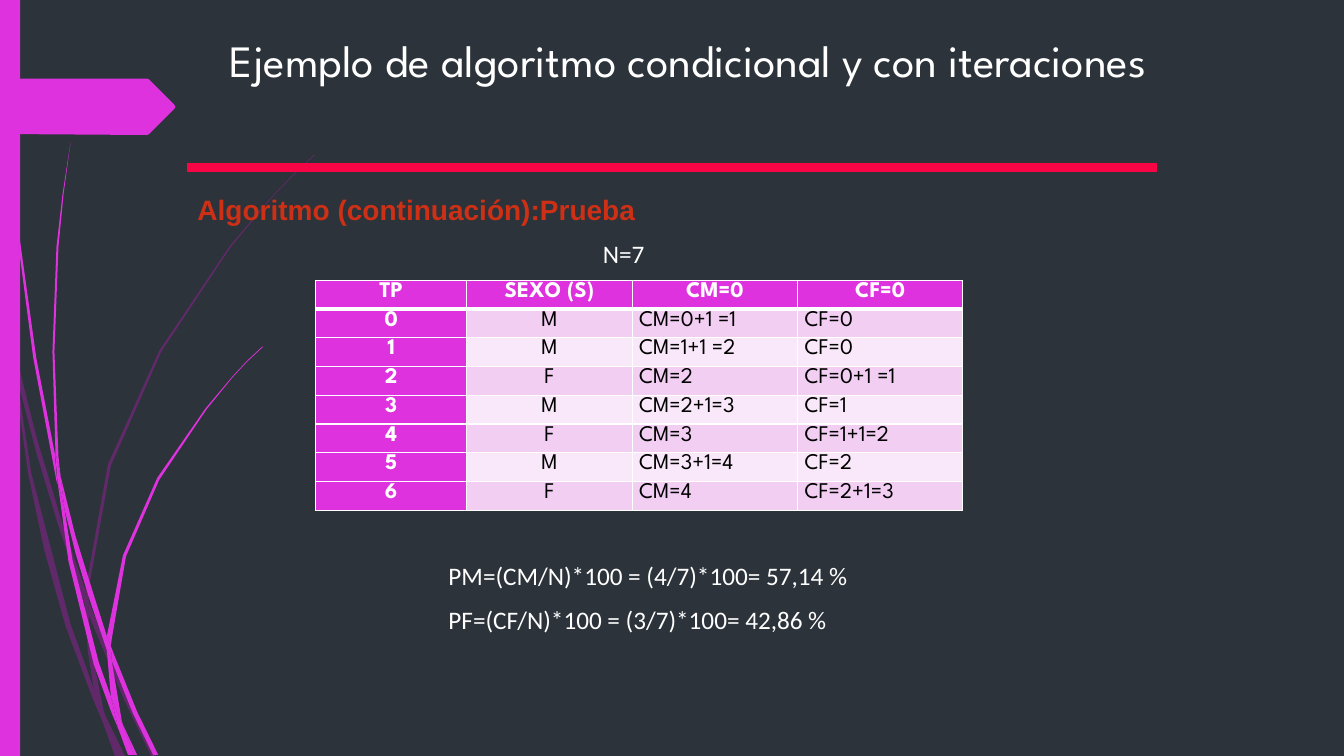
from pptx import Presentation
from pptx.dml.color import RGBColor
from pptx.enum.shapes import MSO_SHAPE
from pptx.enum.text import MSO_ANCHOR, PP_ALIGN
from pptx.oxml.ns import qn
from pptx.util import Inches, Pt
from lxml.etree import SubElement

HUNDREDTH = Inches(0.01)

# Outlines of the ribbon pieces, in hundredths of an inch
DARK_RIBBONS = [
    [(11, 350), (9, 322), (0, 282), (0, 299), (10, 344)],
    [(58, 522), (84, 599), (85, 586), (62, 520), (36, 433), (14, 345), (17, 376), (36, 449)],
    [(92, 607), (88, 596), (88, 610), (123, 694), (150, 750), (155, 750), (127, 692)],
    [(119, 750), (124, 750), (105, 711)],
    [(93, 683), (70, 619), (31, 469), (17, 376), (11, 350), (28, 470), (44, 546), (65, 621),
     (92, 693), (101, 714), (99, 707)],
    [(84, 599), (87, 646), (93, 683), (96, 692), (105, 711), (103, 706), (91, 646), (88, 610),
     (88, 608)],
    [(88, 584), (110, 462), (160, 349), (229, 245), (268, 198), (290, 175), (312, 154),
     (312, 153), (289, 175), (268, 197), (228, 244), (158, 348), (107, 461), (85, 584),
     (85, 586), (88, 596)],
    [(101, 714), (114, 750), (119, 750)],
    [(88, 608), (88, 610), (88, 596), (85, 586), (84, 599)],
    [(96, 692), (93, 683), (99, 707), (101, 714), (119, 750), (105, 711)],
]
BRIGHT_RIBBONS = [
    [(7, 110), (17, 233), (33, 355), (56, 477), (57, 481), (55, 457), (55, 453), (36, 355),
     (19, 232), (8, 109), (5, 48), (4, 0), (3, 0), (4, 48)],
    [(88, 592), (106, 645), (106, 633), (106, 631), (93, 590), (75, 532), (60, 472), (64, 505),
     (75, 549)],
    [(113, 649), (110, 641), (111, 656), (132, 708), (152, 749), (157, 749), (136, 706)],
    [(110, 691), (98, 657), (72, 556), (64, 505), (57, 477), (68, 557), (93, 659), (111, 708),
     (117, 722), (116, 717)],
    [(60, 472), (58, 453), (54, 349), (58, 245), (63, 193), (70, 141), (62, 193), (56, 245),
     (52, 349), (55, 449)],
    [(133, 749), (136, 749), (122, 719)],
    [(57, 477), (64, 505), (60, 472), (55, 449), (55, 453)],
    [(111, 633), (125, 552), (158, 476), (205, 406), (231, 374), (245, 359), (261, 344),
     (260, 344), (245, 358), (231, 373), (204, 405), (156, 474), (122, 551), (106, 631),
     (110, 641)],
    [(117, 722), (127, 749), (131, 749)],
    [(106, 645), (110, 691), (116, 706), (122, 719), (121, 716), (111, 656), (109, 651)],
    [(106, 645), (109, 651), (111, 656), (110, 641), (106, 631), (106, 633)],
    [(116, 706), (110, 691), (116, 717), (117, 722), (130, 749), (133, 749), (122, 719)],
]
ARROW = [(0, 78), (146, 78), (148, 79), (173, 104), (174, 106), (173, 108), (148, 133),
         (146, 134), (0, 133)]

TRACE = [
    ("TP", "SEXO (S)", "CM=0", "CF=0"),
    ("0", "M", "CM=0+1 =1", "CF=0"),
    ("1", "M", "CM=1+1 =2", "CF=0"),
    ("2", "F", "CM=2", "CF=0+1 =1"),
    ("3", "M", "CM=2+1=3", "CF=1"),
    ("4", "F", "CM=3", "CF=1+1=2"),
    ("5", "M", "CM=3+1=4", "CF=2"),
    ("6", "F", "CM=4", "CF=2+1=3"),
]


def rgb(value):
    return RGBColor.from_string(value)


class SlideBuilder:
    bg, accent, dark = "2C333A", "DE32DE", "B01CB0"
    red, heading, white, black = "F70544", "CE3016", "FFFFFF", "000000"
    bands = ("F9E8F9", "F2CEF2")
    display, body = "League Spartan", "Calibri"

    def __init__(self, prs):
        self.s = prs.slides.add_slide(prs.slide_layouts[6])
        self.s.background.fill.solid()
        self.s.background.fill.fore_color.rgb = rgb(self.bg)

    def paint(self, sp, fill, line=None, opacity=None):
        sp.shadow.inherit = False
        sp.fill.solid()
        sp.fill.fore_color.rgb = rgb(fill)
        if line:
            sp.line.color.rgb = rgb(line)
            sp.line.width = Pt(0.75)
        else:
            sp.line.fill.background()
        if opacity:
            color = sp._element.spPr.find(qn("a:solidFill"))[0]
            SubElement(color, qn("a:alpha")).set("val", str(opacity * 1000))

    def rect(self, x, y, w, h, fill, line=None):
        sp = self.s.shapes.add_shape(MSO_SHAPE.RECTANGLE, Inches(x), Inches(y), Inches(w), Inches(h))
        self.paint(sp, fill, line)

    def outline(self, shapes, points, fill, opacity=None):
        builder = shapes.build_freeform(*points[0], scale=HUNDREDTH)
        builder.add_line_segments(points[1:], close=True)
        self.paint(builder.convert_to_shape(), fill, opacity=opacity)

    def ribbons(self, pieces, fill, opacity=None):
        group = self.s.shapes.add_group_shape()
        for points in pieces:
            self.outline(group.shapes, points, fill, opacity)

    def run(self, p, text, size, font, color, bold=False):
        r = p.add_run()
        r.text = text
        r.font.size, r.font.name, r.font.bold = Pt(size), font, bold
        r.font.color.rgb = rgb(color)

    def text(self, x, y, w, h, lines, size, font, color, bold=False, wrap=True,
             spacing=None, after=None):
        tf = self.s.shapes.add_textbox(Inches(x), Inches(y), Inches(w), Inches(h)).text_frame
        tf.word_wrap = wrap
        for i, line in enumerate(lines):
            p = tf.add_paragraph() if i else tf.paragraphs[0]
            p.line_spacing = spacing
            p.space_after = after
            self.run(p, line, size, font, color, bold)

    def borders(self, cell, top, bottom):
        tc_pr = cell._tc.get_or_add_tcPr()
        for side, width in (("L", 1), ("R", 1), ("T", top), ("B", bottom)):
            ln = SubElement(tc_pr, qn(f"a:ln{side}"), w=str(Pt(width)))
            SubElement(SubElement(ln, qn("a:solidFill")), qn("a:srgbClr"), val=self.white)

    def table(self, x, y, widths, row_height, rows):
        frame = self.s.shapes.add_table(len(rows), len(widths), Inches(x), Inches(y),
                                        Inches(sum(widths)), Inches(row_height * len(rows)))
        table = frame.table
        for column, width in zip(table.columns, widths):
            column.width = Inches(width)
        for i, row in enumerate(rows):
            table.rows[i].height = Inches(row_height)
            for j, value in enumerate(row):
                cell = table.cell(i, j)
                strong = i == 0 or j == 0
                self.borders(cell, 3 if i == 1 else 1, 3 if i == 0 else 1)
                cell.fill.solid()
                cell.fill.fore_color.rgb = rgb(self.accent if strong else self.bands[i % 2])
                cell.margin_left = cell.margin_right = Inches(0.07)
                cell.margin_top = cell.margin_bottom = 0
                cell.vertical_anchor = MSO_ANCHOR.TOP
                p = cell.text_frame.paragraphs[0]
                p.alignment = PP_ALIGN.CENTER if i == 0 or j < 2 else PP_ALIGN.LEFT
                p.line_spacing = 1.07
                self.run(p, value, 16, self.display, self.white if strong else self.black, strong)


def main():
    prs = Presentation()
    prs.slide_width, prs.slide_height = Inches(13.33), Inches(7.5)
    b = SlideBuilder(prs)

    # Side decoration
    b.ribbons(DARK_RIBBONS, b.dark, opacity=40)
    b.ribbons(BRIGHT_RIBBONS, b.accent)
    b.rect(0, 0, 0.2, 7.5, b.accent)
    b.outline(b.s.shapes, ARROW, b.accent)

    # Title, rule and heading
    b.rect(1.86, 1.62, 9.61, 0.08, b.red, b.red)
    b.text(2.18, 0.28, 11.15, 1.18, ["Ejemplo de algoritmo condicional y con iteraciones"],
           32, b.display, b.white)
    b.text(1.86, 1.86, 9.61, 0.43, ["Algoritmo (continuación):Prueba"],
           20, "Arial", b.heading, bold=True)

    # Trace table
    b.table(3.13, 2.78, (1.5, 1.64, 1.64, 1.64), 0.27, TRACE)

    # Sample size and resulting percentages
    b.text(5.88, 2.29, 0.62, 0.43, ["N=7"], 18, b.body, b.white, wrap=False,
           spacing=1.07, after=Pt(8))
    b.text(4.35, 5.49, 6.67, 0.86,
           ["PM=(CM/N)*100 = (4/7)*100= 57,14 %", "PF=(CF/N)*100 = (3/7)*100= 42,86 %"],
           18, b.body, b.white, spacing=1.07, after=Pt(8))

    prs.save("out.pptx")


if __name__ == "__main__":
    main()
